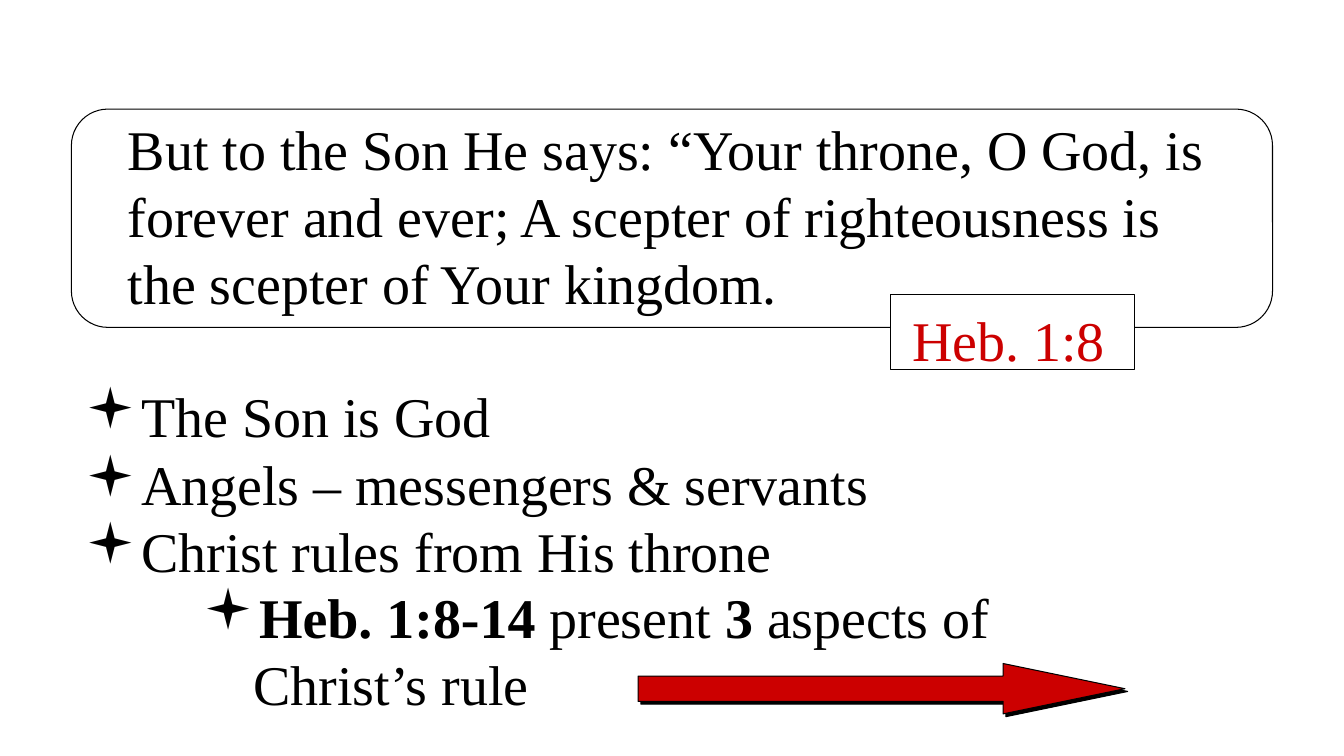
from lxml import etree
from pptx import Presentation
from pptx.dml.color import RGBColor
from pptx.enum.shapes import MSO_SHAPE as Preset
from pptx.oxml.ns import qn
from pptx.util import Cm, Pt

COLORS = {"paper": "FFFFFF", "ink": "000000", "accent": "CC0000"}
FONT = "Times New Roman"
SIZE = Pt(40)
BULLET_INDENT = Cm(1.27)


def add_outlined(shapes, preset, box, fill):
    """Filled shape with a thin ink outline; box is left, top, width, height."""
    outlined = shapes.add_shape(preset, *map(Cm, box))
    outlined.shadow.inherit = False
    outlined.fill.solid()
    outlined.fill.fore_color.rgb = RGBColor.from_string(COLORS[fill])
    outlined.line.color.rgb = RGBColor.from_string(COLORS["ink"])
    outlined.line.width = Pt(0.75)
    return outlined


def add_shadow(effects, blur, distance, angle):
    shadow = etree.SubElement(effects, qn("a:outerShdw"), blurRad=str(blur),
                              dist=str(distance), dir=str(angle * 60000),
                              algn="ctr", rotWithShape="0")
    etree.SubElement(shadow, qn("a:srgbClr"), val=COLORS["ink"])


def format_run(run, color="ink", bold=None):
    run.font.size = SIZE
    run.font.bold = bold
    run.font.color.rgb = RGBColor.from_string(COLORS[color])
    run.font.name = FONT


def add_text(shapes, box, paragraphs, color="ink", bullets=False, wrap=True):
    """Each paragraph is a list of (words, bold) pieces."""
    frame = shapes.add_textbox(*map(Cm, box)).text_frame
    frame.word_wrap = wrap
    for index, pieces in enumerate(paragraphs):
        paragraph = frame.add_paragraph() if index else frame.paragraphs[0]
        if bullets:
            props = paragraph._p.get_or_add_pPr()
            props.set("marL", str(BULLET_INDENT))
            props.set("indent", str(-BULLET_INDENT))
            etree.SubElement(props, qn("a:buFont"), typeface="Wingdings")
            etree.SubElement(props, qn("a:buChar"), char="▪")
        for words, bold in pieces:
            run = paragraph.add_run()
            run.text = words
            format_run(run, color, bold)
    return frame


def add_quote(slide, left, top, width, height):
    """Rounded verse panel with its reference on the lower edge."""
    panel = add_outlined(slide.shapes, Preset.ROUNDED_RECTANGLE,
                         (left, top, width, height), "paper")
    panel.adjustments[0] = 0.167
    verse = ("But to the Son He says: “Your throne, O God, is forever and ever; "
             "A scepter of righteousness is the scepter of Your kingdom.")
    add_text(slide.shapes, (left + 1.17, top, width - 1.9, height - 0.12),
             [[(verse, None)]])

    # Reference label
    label = slide.shapes.add_group_shape().shapes
    label_left, label_top = left + 20.64, top + 4.67
    add_outlined(label, Preset.RECTANGLE,
                 (label_left, label_top, 6.15, 1.9), "paper")
    reference = add_text(label, (label_left + 0.3, label_top + 0.15, 5.41, 1.96),
                         [[("Heb. 1:8", None)]], color="accent", wrap=False)
    fill = reference.paragraphs[0].runs[0].font._element.find(qn("a:solidFill"))
    effects = etree.Element(qn("a:effectLst"))
    add_shadow(effects, Pt(3), Pt(3), 45)
    fill.addnext(effects)


def add_points(slide, left, top, width, height):
    """Main points, then the indented point and its arrow."""
    points = ("The Son is God", "Angels – messengers & servants",
              "Christ rules from His throne")
    add_text(slide.shapes, (left, top, width, 5.33),
             [[(point, None)] for point in points], bullets=True)

    # Arrow to what follows
    arrow = add_outlined(slide.shapes, Preset.RIGHT_ARROW,
                         (left + 14.18, top + 7.22, 12.27, 1.27), "accent")
    arrow.adjustments[1] = 2.417
    add_shadow(arrow._element.spPr.find(qn("a:effectLst")), 0, Pt(2.8), 45)

    # Indented point
    aspects = [("Heb. 1:8-14 ", True), ("present ", False), ("3", True),
               (" aspects of Christ’s rule", False)]
    add_text(slide.shapes, (left + 2.97, top + 5.06, 23.5, height - 5.06),
             [aspects], bullets=True)


def main():
    deck = Presentation()
    deck.slide_width, deck.slide_height = Cm(33.87), Cm(19.05)
    slide = deck.slides.add_slide(deck.slide_layouts[6])
    add_quote(slide, 1.8, 2.75, 30.27, 5.5)
    add_points(slide, 1.9, 9.5, 30.48, 8.69)
    deck.save("out.pptx")


if __name__ == "__main__":
    main()
